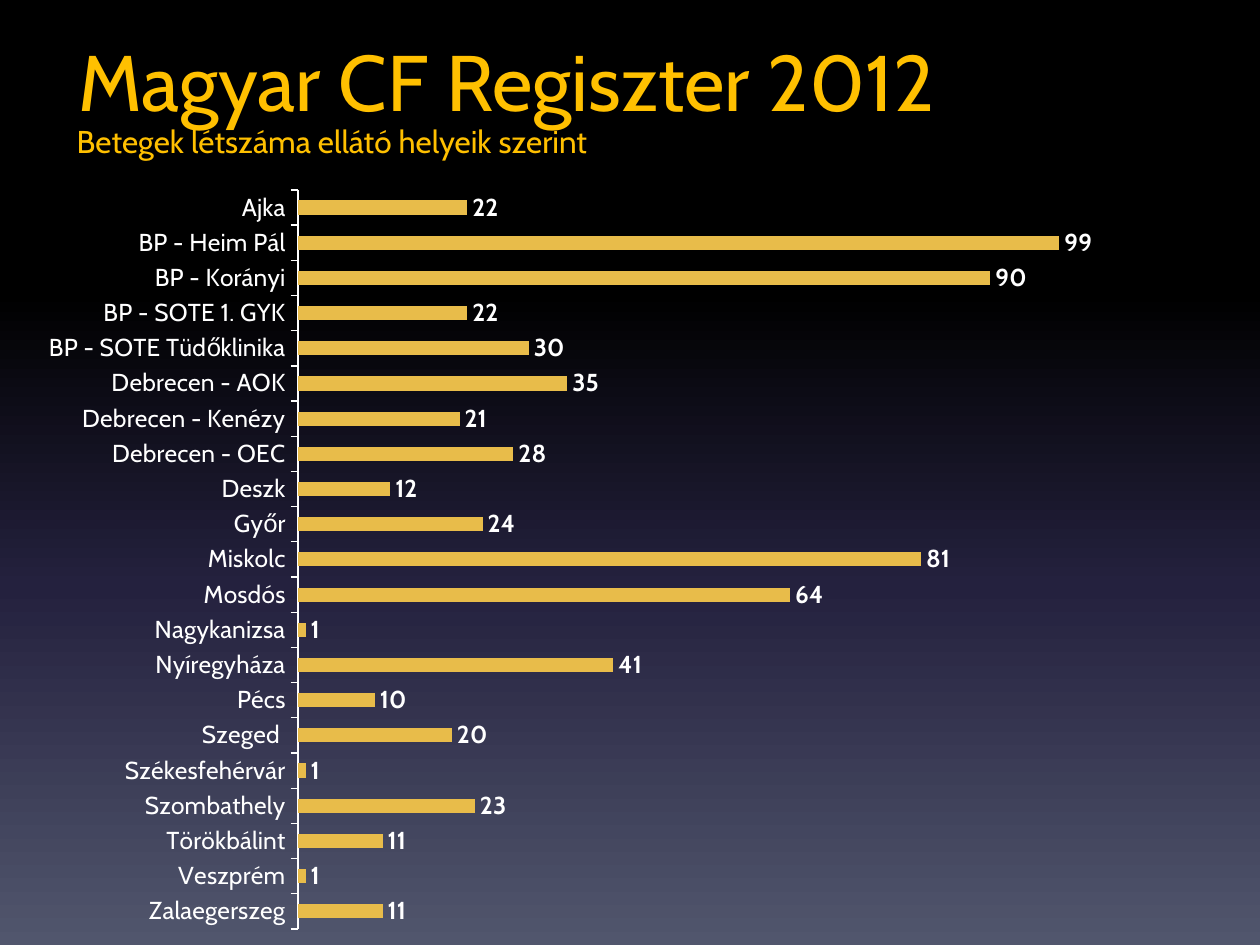
from dataclasses import dataclass

from lxml.etree import SubElement
from pptx import Presentation
from pptx.chart.data import CategoryChartData
from pptx.dml.color import RGBColor
from pptx.enum.chart import XL_CHART_TYPE as ChartType
from pptx.enum.chart import XL_LABEL_POSITION as LabelPosition
from pptx.enum.chart import XL_TICK_MARK as TickMark
from pptx.enum.text import MSO_ANCHOR as Anchor
from pptx.enum.text import MSO_AUTO_SIZE as AutoSize
from pptx.enum.text import PP_ALIGN as Align
from pptx.oxml.ns import qn
from pptx.util import Inches, Pt

WIDTH, HEIGHT = Inches(10), Inches(7.5)
FONT = "Cabin"
COLORS = {"heading": "FFC000", "bar": "E8BC4A", "label": "FFFFFF"}
BACKGROUND_STOPS = {0: "000000", 31: "000000", 62: "24213E", 100: "51566D"}


@dataclass(frozen=True)
class Box:
    left: float
    top: float
    width: float
    height: float

    def lengths(self) -> tuple[int, int, int, int]:
        return (
            int(WIDTH * self.left / 100),
            int(HEIGHT * self.top / 100),
            int(WIDTH * self.width / 100),
            int(HEIGHT * self.height / 100),
        )


@dataclass(frozen=True)
class Clinic:
    name: str
    patients: int


TITLE_BOX = Box(5.2, 2.53, 90, 11.87)
SUBTITLE_BOX = Box(5.1, 12.27, 45.5, 5.33)
CHART_BOX = Box(2, 18.53, 96.9, 81.47)
PLOT_BOX = Box(22.35, 1.93, 75.6, 96)

CLINICS = [
    Clinic("Ajka", 22),
    Clinic("BP - Heim Pál", 99),
    Clinic("BP - Korányi", 90),
    Clinic("BP - SOTE 1. GYK", 22),
    Clinic("BP - SOTE Tüdőklinika", 30),
    Clinic("Debrecen - AOK", 35),
    Clinic("Debrecen - Kenézy", 21),
    Clinic("Debrecen - OEC", 28),
    Clinic("Deszk", 12),
    Clinic("Győr", 24),
    Clinic("Miskolc", 81),
    Clinic("Mosdós", 64),
    Clinic("Nagykanizsa", 1),
    Clinic("Nyíregyháza", 41),
    Clinic("Pécs", 10),
    Clinic("Szeged ", 20),
    Clinic("Székesfehérvár", 1),
    Clinic("Szombathely", 23),
    Clinic("Törökbálint", 11),
    Clinic("Veszprém", 1),
    Clinic("Zalaegerszeg", 11),
]


def style_font(font, size: float, color: str, bold: bool = False) -> None:
    font.name, font.size, font.bold = FONT, Pt(size), bold
    font.color.rgb = RGBColor.from_string(COLORS[color])


def paint_background(slide) -> None:
    fill = slide.background.fill
    fill.gradient()
    fill.gradient_angle = 270
    stop_list = next(slide.element.iter(qn("a:gsLst")))
    for stop in list(stop_list):
        stop_list.remove(stop)
    for percent, color in BACKGROUND_STOPS.items():
        stop = SubElement(stop_list, qn("a:gs"), pos=str(percent * 1000))
        SubElement(stop, qn("a:srgbClr"), val=color)


def write_heading(shape, text: str, size: float) -> None:
    paragraph = shape.text_frame.paragraphs[0]
    paragraph.text = text
    paragraph.alignment = Align.LEFT
    style_font(paragraph.font, size, "heading")


def add_title(slide) -> None:
    title = slide.shapes.title
    title.left, title.top, title.width, title.height = TITLE_BOX.lengths()
    title.text_frame.vertical_anchor = Anchor.MIDDLE
    write_heading(title, "Magyar CF Regiszter 2012", 45)


def add_subtitle(slide) -> None:
    subtitle = slide.shapes.add_textbox(*SUBTITLE_BOX.lengths())
    subtitle.text_frame.word_wrap = False
    subtitle.text_frame.auto_size = AutoSize.SHAPE_TO_FIT_TEXT
    write_heading(subtitle, "Betegek létszáma ellátó helyeik szerint", 18)


def place_plot(chart, box: Box) -> None:
    plot_area = next(chart.element.iter(qn("c:plotArea")))
    layout = plot_area.find(qn("c:layout"))
    if layout is None:
        layout = plot_area.makeelement(qn("c:layout"))
        plot_area.insert(0, layout)
    manual = SubElement(layout, qn("c:manualLayout"))
    settings = {
        "layoutTarget": "inner",
        "xMode": "edge",
        "yMode": "edge",
        "x": box.left / 100,
        "y": box.top / 100,
        "w": box.width / 100,
        "h": box.height / 100,
    }
    for name, value in settings.items():
        SubElement(manual, qn(f"c:{name}"), val=str(value))


def add_patient_chart(slide) -> None:
    data = CategoryChartData()
    data.categories = [clinic.name for clinic in CLINICS]
    data.add_series("Series 1", [clinic.patients for clinic in CLINICS])
    chart = slide.shapes.add_chart(
        ChartType.BAR_CLUSTERED, *CHART_BOX.lengths(), data
    ).chart
    chart.has_legend = False
    chart.has_title = False
    style_font(chart.font, 10, "label")
    place_plot(chart, PLOT_BOX)

    value_axis = chart.value_axis
    value_axis.visible = False
    value_axis.has_major_gridlines = False
    value_axis.minimum_scale, value_axis.maximum_scale = 0, 120

    category_axis = chart.category_axis
    category_axis.reverse_order = True
    category_axis.major_tick_mark = TickMark.OUTSIDE
    category_axis.format.line.color.rgb = RGBColor.from_string(COLORS["label"])
    category_axis.format.line.width = Pt(0.75)
    style_font(category_axis.tick_labels.font, 14, "label")

    plot = chart.plots[0]
    plot.gap_width = 150
    plot.vary_by_categories = False
    series = plot.series[0]
    series.format.fill.solid()
    series.format.fill.fore_color.rgb = RGBColor.from_string(COLORS["bar"])
    labels = series.data_labels
    labels.show_value = True
    labels.position = LabelPosition.OUTSIDE_END
    style_font(labels.font, 14, "label", bold=True)


def main() -> None:
    presentation = Presentation()
    presentation.slide_width, presentation.slide_height = WIDTH, HEIGHT
    slide = presentation.slides.add_slide(presentation.slide_layouts[5])
    paint_background(slide)
    add_subtitle(slide)
    add_title(slide)
    add_patient_chart(slide)
    presentation.save("out.pptx")


if __name__ == "__main__":
    main()
